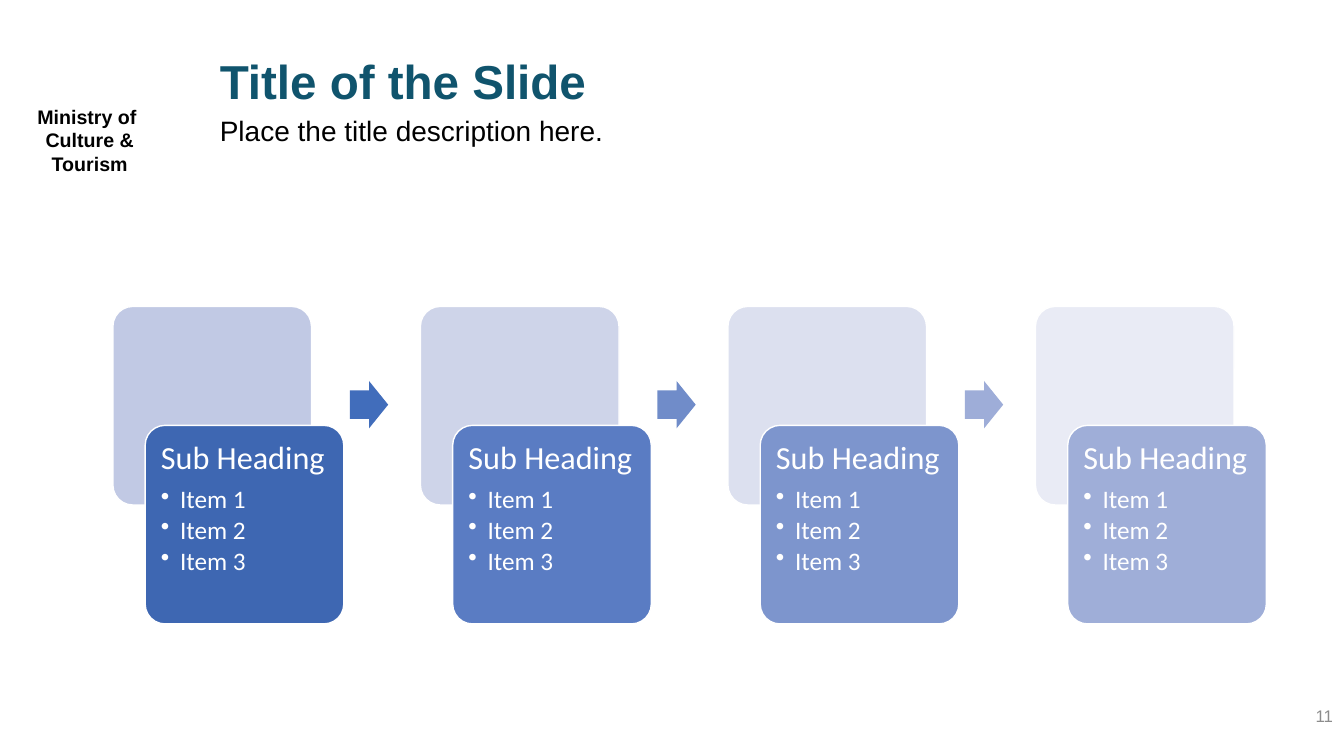
import dataclasses
import pptx
import pptx.dml.color
import pptx.enum.shapes
import pptx.enum.text
import pptx.oxml
import pptx.util

Inches = pptx.util.Inches
Pt = pptx.util.Pt
Shape = pptx.enum.shapes.MSO_SHAPE
Align = pptx.enum.text.PP_ALIGN
Anchor = pptx.enum.text.MSO_ANCHOR


@dataclasses.dataclass(frozen=True)
class Theme:
    sans: str = "Arial"
    body: str = "Calibri"
    ink: str = "000000"
    title: str = "10546D"
    gray: str = "8C8C8C"
    white: str = "FFFFFF"
    backs: tuple = ("C1C9E4", "CED4E9", "DCE0EF", "E9EBF5")
    cards: tuple = ("3E67B2", "5A7CC3", "7D95CD", "9FAED8")
    arrows: tuple = ("416DBB", "708CC9", "9EADD8")
    title_size: int = 34
    head_size: int = 23
    desc_size: int = 20
    item_size: int = 18
    name_size: int = 14
    page_size: int = 12


THEME = Theme()
STEPS = [("Sub Heading", ["Item 1", "Item 2", "Item 3"])] * 4


def rgb(color):
    return pptx.dml.color.RGBColor.from_string(color)


def write(para, text, size, color, font, bold=False):
    run = para.add_run()
    run.text = text
    run.font.size = Pt(size)
    run.font.name = font
    run.font.bold = bold
    run.font.color.rgb = rgb(color)


def inset(frame, side, top):
    frame.margin_left = frame.margin_right = Inches(side)
    frame.margin_top = frame.margin_bottom = Inches(top)


def add_text(slide, box, lines, size, color, bold=False, align=Align.LEFT,
             pitch=None, pad=(0.1, 0.05), anchor=Anchor.TOP):
    frame = slide.shapes.add_textbox(*map(Inches, box)).text_frame
    frame.word_wrap = True
    frame.vertical_anchor = anchor
    inset(frame, *pad)
    for i, line in enumerate(lines):
        para = frame.add_paragraph() if i else frame.paragraphs[0]
        para.alignment = align
        if pitch:
            para.line_spacing = Pt(pitch)
        write(para, line, size, color, THEME.sans, bold)


def add_block(slide, kind, box, fill, edge=None):
    block = slide.shapes.add_shape(kind, *map(Inches, box))
    block.shadow.inherit = False
    block.fill.solid()
    block.fill.fore_color.rgb = rgb(fill)
    if edge:
        block.line.color.rgb = rgb(edge)
        block.line.width = Pt(1)
    else:
        block.line.fill.background()
    return block


def add_tile(slide, box, fill):
    tile = add_block(slide, Shape.ROUNDED_RECTANGLE, box, fill, THEME.white)
    tile.adjustments[0] = 0.1
    return tile


def set_bullet(para):
    props = para._p.get_or_add_pPr()
    props.set("marL", str(Inches(0.19)))
    props.set("indent", str(-Inches(0.19)))
    props.append(pptx.oxml.parse_xml(
        '<a:buChar xmlns:a="http://schemas.openxmlformats.org/drawingml/2006/main"'
        ' char="•"/>'))


def fill_card(card, head, items):
    frame = card.text_frame
    frame.word_wrap = True
    frame.vertical_anchor = Anchor.TOP
    inset(frame, 0.1, 0.1)
    para = frame.paragraphs[0]
    para.space_after = Pt(8)
    write(para, head, THEME.head_size, THEME.white, THEME.body)
    for item in items:
        para = frame.add_paragraph()
        para.level = 1
        set_bullet(para)
        para.space_after = Pt(2.5)
        write(para, item, THEME.item_size, THEME.white, THEME.body)
    for para in frame.paragraphs:
        para.alignment = Align.LEFT
        para.line_spacing = 0.9


def add_flow(slide, left, top, pitch):
    """Lay the steps out from left to right, an arrow between each pair."""
    side = 1.97
    for i, (head, items) in enumerate(STEPS):
        x = left + i * pitch
        add_tile(slide, (x, top, side, side), THEME.backs[i])
        card = add_tile(slide, (x + 0.32, top + 1.18, side, side), THEME.cards[i])
        fill_card(card, head, items)
        if i < len(THEME.arrows):
            arrow = add_block(slide, Shape.RIGHT_ARROW,
                              (x + 2.35, top + 0.74, 0.38, 0.47), THEME.arrows[i])
            arrow.adjustments[0] = 0.6
            arrow.adjustments[1] = 0.5


def add_header(slide, left, top):
    add_text(slide, (left, top + 0.7, 8.45, 0.68),
             ["Place the title description here."],
             THEME.desc_size, THEME.ink, pitch=16.5, pad=(0, 0))
    add_text(slide, (left, top, 8.38, 0.53), ["Title of the Slide"],
             THEME.title_size, THEME.title, bold=True, pitch=40, pad=(0, 0))


def add_frame(slide):
    """Place the ministry name and the page number."""
    add_text(slide, (0, 0.99, 1.78, 0.57), ["Ministry of ", "Culture & Tourism"],
             THEME.name_size, THEME.ink, bold=True, align=Align.CENTER)
    add_text(slide, (10.32, 6.9, 3, 0.4), ["11"], THEME.page_size, THEME.gray,
             align=Align.RIGHT, anchor=Anchor.MIDDLE)


def main():
    deck = pptx.Presentation()
    deck.slide_width = Inches(13.33)
    deck.slide_height = Inches(7.5)
    slide = deck.slides.add_slide(deck.slide_layouts[6])
    add_frame(slide)
    add_flow(slide, 1.12, 3.04, 3.05)
    add_header(slide, 2.18, 0.53)
    deck.save("out.pptx")


if __name__ == "__main__":
    main()
